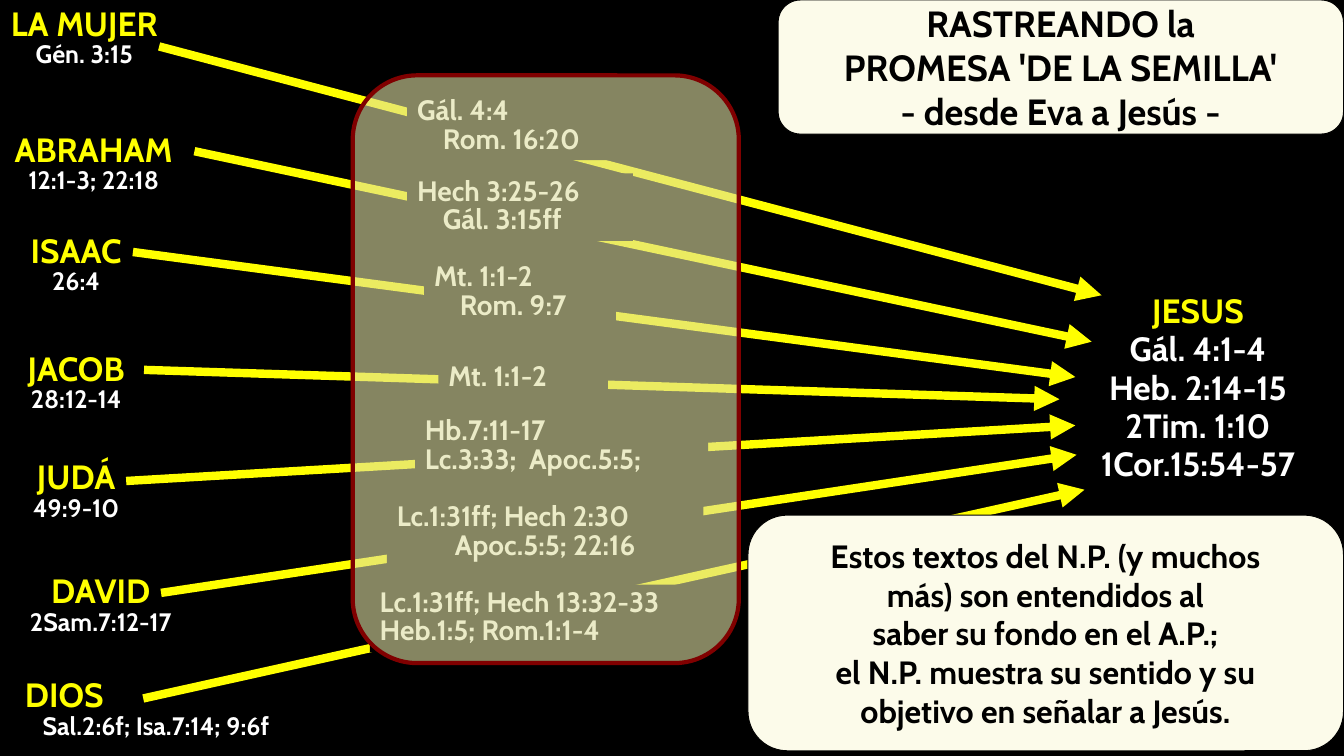
from lxml.etree import SubElement
from pptx import Presentation
from pptx.dml.color import RGBColor
from pptx.enum.shapes import MSO_CONNECTOR as Connector, MSO_SHAPE as Preset
from pptx.enum.text import MSO_ANCHOR as Anchor, MSO_AUTO_SIZE as AutoSize, PP_ALIGN as Align
from pptx.oxml.ns import qn
from pptx.util import Cm, Pt

BLACK, WHITE, YELLOW = "000000", "FFFFFF", "FFFF00"
CREAM, OLIVE, MAROON = "FCFBEA", "DEDEA2", "800000"


def paint(fill, colour):
    fill.solid()
    fill.fore_color.rgb = RGBColor.from_string(colour)


def write(box, lines, frame_format, spacing=1.0):
    """Each line is (text, size, colour, alignment, indent in cm)."""
    frame = box.text_frame
    for name, value in frame_format.items():
        setattr(frame, name, value)
    for index, (text, size, colour, align, indent) in enumerate(lines):
        para = frame.paragraphs[0] if index == 0 else frame.add_paragraph()
        para.alignment, para.line_spacing = align, spacing
        if indent:
            para._p.get_or_add_pPr().set("marL", str(Cm(indent)))
        span = para.add_run()
        span.text = text
        for name, value in {"name": "Cabin", "size": Pt(size), "bold": True}.items():
            setattr(span.font, name, value)
        paint(span.font.fill, colour)


GROWING = {"word_wrap": True, "auto_size": AutoSize.SHAPE_TO_FIT_TEXT,
           "vertical_anchor": Anchor.TOP}
CENTRED = {"word_wrap": False, "auto_size": AutoSize.NONE,
           "vertical_anchor": Anchor.MIDDLE}

deck = Presentation()
deck.slide_width, deck.slide_height = Cm(33.87), Cm(19.05)
page = deck.slides.add_slide(deck.slide_layouts[6])
paint(page.background.fill, BLACK)

# Ancestors on the left: left, top, width, height, name, verses
ancestors = [
    (-0.2, 0.1, 4.65, 2.67, "LA MUJER", "Gén. 3:15"),
    (-0.18, 3.28, 5.08, 1.78, "ABRAHAM", "12:1-3; 22:18"),
    (-0.2, 5.82, 4.24, 1.78, "ISAAC", "26:4"),
    (-0.2, 8.79, 4.24, 1.78, "JACOB", "28:12-14"),
    (-0.2, 11.53, 4.24, 1.78, "JUDÁ", "49:9-10"),
    (0, 14.4, 5.08, 1.78, "DAVID", "2Sam.7:12-17"),
    (-0.2, 17.02, 8.26, 1.78, "DIOS", "Sal.2:6f; Isa.7:14; 9:6f"),
]
for *place, name, verses in ancestors:
    box = page.shapes.add_textbox(*map(Cm, place))
    align, indent = (Align.LEFT, 0.58) if name == "DIOS" else (Align.CENTER, 0)
    write(box, [(name, 24, YELLOW, align, indent),
                (verses, 18, WHITE, Align.CENTER, 0)], GROWING, 0.85)

# Jesus on the right
jesus = ["JESUS", "Gál. 4:1-4", "Heb. 2:14-15", "2Tim. 1:10", "1Cor.15:54-57"]
box = page.shapes.add_textbox(Cm(26.7), Cm(7.26), Cm(6.98), Cm(5.13))
write(box, [(text, 24, YELLOW if text == "JESUS" else WHITE, Align.CENTER, 0)
            for text in jesus], GROWING, 0.95)

# Arrows from each ancestor to Jesus: start x, start y, end x, end y
arrows = [
    (4.01, 1.17, 27.76, 7.44),
    (4.9, 3.81, 27.51, 8.61),
    (3.35, 6.35, 27.1, 9.5),
    (3.63, 9.32, 26.7, 10.06),
    (3.18, 12.12, 27.1, 10.72),
    (4.06, 14.94, 27.13, 11.46),
    (3.61, 17.6, 27.33, 12.34),
]
for ends in arrows:
    arrow = page.shapes.add_connector(Connector.STRAIGHT, *map(Cm, ends))
    paint(arrow.line.fill, YELLOW)
    arrow.line.width = Pt(6)
    SubElement(arrow.line._get_or_add_ln(), qn("a:tailEnd"), type="triangle")
    SubElement(arrow._element.spPr, qn("a:effectLst"))

# New Testament verses: left, top, width, lines, second line's alignment and indent
verse_boxes = [
    (10.26, 2.34, 6.32, ["Gál. 4:4", "Rom. 16:20"], Align.LEFT, 0.65),
    (10.26, 4.37, 5.69, ["Hech 3:25-26", "Gál. 3:15ff"], Align.LEFT, 0.65),
    (10.69, 6.53, 4.83, ["Mt. 1:1-2", "Rom. 9:7"], Align.LEFT, 0.65),
    (11.05, 9.04, 4.27, ["Mt. 1:1-2"], Align.LEFT, 0),
    (10.46, 10.41, 7.39, ["Hb.7:11-17", "Lc.3:33;  Apoc.5:5;"], Align.LEFT, 0),
    (9.75, 12.57, 7.98, ["Lc.1:31ff; Hech 2:30", "Apoc.5:5; 22:16"], Align.CENTER, 0),
    (9.32, 14.73, 9.53, ["Lc.1:31ff; Hech 13:32-33", "Heb.1:5; Rom.1:1-4"], Align.LEFT, 0),
]
for left, top, width, texts, align, indent in verse_boxes:
    height = 0.28 + 0.71 * len(texts)
    box = page.shapes.add_shape(Preset.RECTANGLE, Cm(left), Cm(top), Cm(width), Cm(height))
    box.shadow.inherit = False
    paint(box.fill, BLACK)
    box.line.fill.background()
    formats = [(Align.LEFT, 0), (align, indent)]
    write(box, [(text, 20, WHITE, *layout) for text, layout in zip(texts, formats)],
          GROWING, 0.85)

# Title, translucent panel and closing note
title = ["RASTREANDO la", "PROMESA 'DE LA SEMILLA'", "- desde Eva a Jesús -"]
note = ["Estos textos del N.P. (y muchos", "más) son entendidos al",
        "saber su fondo en el A.P.;", "el N.P. muestra su sentido y su",
        "objetivo en señalar a Jesús."]
cards = [
    ((19.61, 0, 14.25, 3.38), CREAM, BLACK, 0.75, title, 26),
    ((8.89, 1.9, 9.73, 14.81), OLIVE, MAROON, 3, [], 0),
    ((18.85, 12.98, 15.01, 5.94), CREAM, BLACK, 0.75, note, 23),
]
for place, fill, outline, weight, texts, size in cards:
    card = page.shapes.add_shape(Preset.ROUNDED_RECTANGLE, *map(Cm, place))
    card.shadow.inherit = False
    paint(card.fill, fill)
    paint(card.line.fill, outline)
    card.line.width = Pt(weight)
    if fill == OLIVE:
        shade = card._element.spPr.find(qn("a:solidFill")).find(qn("a:srgbClr"))
        SubElement(shade, qn("a:alpha"), val="60000")
    write(card, [(text, size, BLACK, Align.CENTER, 0) for text in texts], CENTRED)

deck.save("out.pptx")
